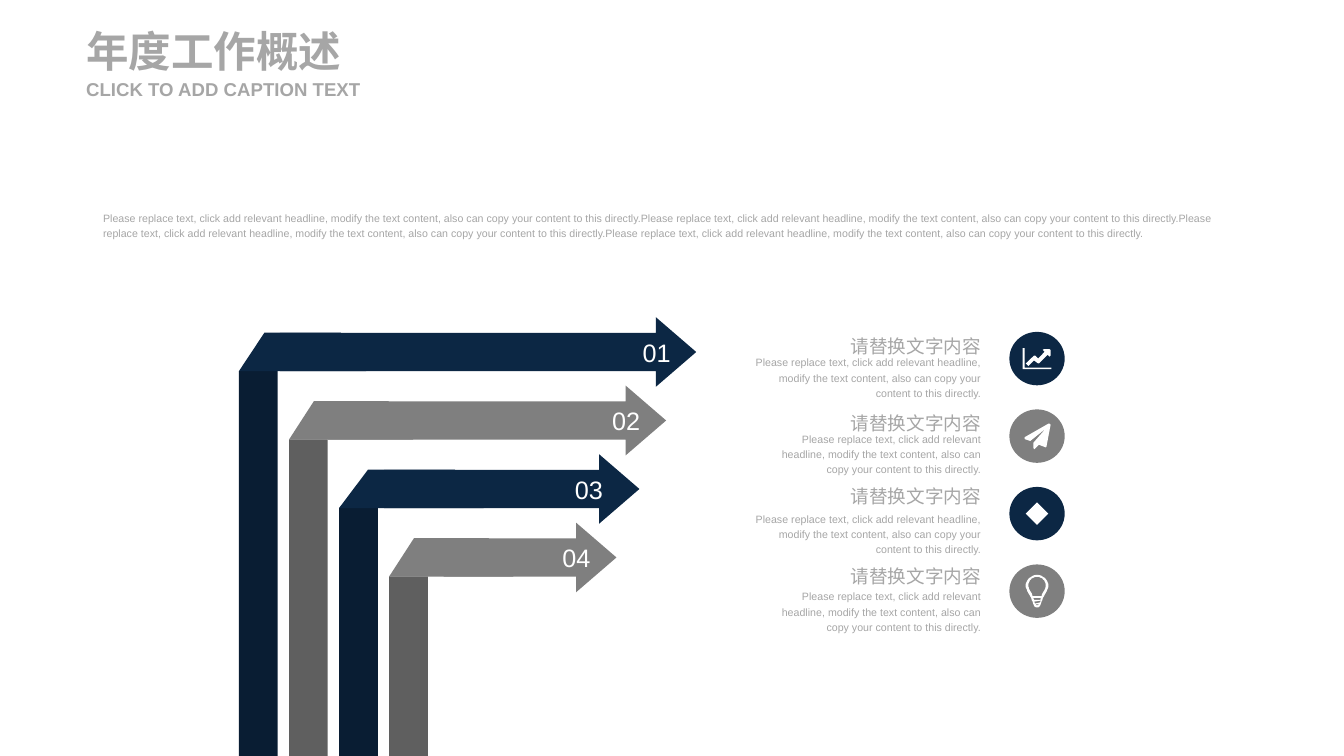
from pptx import Presentation
from pptx import util as u
from pptx.dml.color import RGBColor
from pptx.enum import shapes, text

NAVY, NAVY_DARK = "0C2744", "091D33"
GREY, GREY_DARK = "7F7F7F", "5F5F5F"
TEXT, WHITE = "A6A6A6", "FFFFFF"
WIDTH, HEIGHT = 35.71, 20.09
PHRASE = ("Please replace text, click add relevant headline, modify the text "
          "content, also can copy your content to this directly.")
HEADING = "请替换文字内容"


def rgb(value):
    return RGBColor.from_string(value)


def bezier(start, *segments, steps=10):
    """Points along a chain of cubic curves, start included."""
    points = [start]
    for a, b, c in segments:
        p0 = points[-1]
        for k in range(1, steps + 1):
            t = k / steps
            s = 1 - t
            points.append(tuple(
                s**3 * p + 3 * s * s * t * q + 3 * s * t * t * v + t**3 * w
                for p, q, v, w in zip(p0, a, b, c)))
    return points


def mirrored(half):
    """Closes a left half outline with its reflection in the vertical axis."""
    return half + [(-x, y) for x, y in reversed(half)]


# Icon outlines: tenths of a millimetre from the centre of the disc
CHART = [
    [(38, 28), (-38, 28), (-38, -28), (-33, -28), (-33, 24), (38, 24)],
    [(36, -8), (33, -5), (28, -10), (5, 13), (3, 13), (-8, 5), (-23, 20),
     (-30, 13), (-8, -8), (-5, -8), (3, 0), (20, -18), (15, -23),
     (18, -25), (33, -25), (36, -23)],
]
PLANE = [
    [(36, -30), (25, 28), (23, 30), (5, 23), (-5, 33), (-8, 35), (-10, 30),
     (-10, 18), (23, -20), (-18, 13), (-33, 8), (-33, 3), (30, -33),
     (33, -33)],
]
BULB = [
    mirrored(bezier((0, -43),
                    ((-15, -43), (-30, -30), (-30, -15)),
                    ((-30, -3), (-18, 10), (-15, 20)),
                    ((-10, 33), (-10, 43), (0, 43)))),
    mirrored(bezier((0, -38),
                    ((-13, -38), (-23, -28), (-23, -15)),
                    ((-23, -10), (-20, -3), (-15, 5)),
                    ((-13, 8), (-13, 10), (-12, 13)))),
    [(-10, 18), (10, 18), (9, 23), (-8, 23)],
    [(-8, 28), (10, 25), (8, 30), (-5, 33)],
    [(-5, 36), (8, 33), (0, 38)],
]


class Deck:
    font = "Arial"

    def __init__(self):
        self.prs = Presentation()
        self.prs.slide_width, self.prs.slide_height = u.Cm(WIDTH), u.Cm(HEIGHT)
        self.slide = self.prs.slides.add_slide(self.prs.slide_layouts[6])

    def paint(self, sp, color):
        sp.shadow.inherit = False
        sp.fill.solid()
        sp.fill.fore_color.rgb = rgb(color)
        sp.line.fill.background()

    def shape(self, kind, x, y, w, h, color):
        sp = self.slide.shapes.add_shape(kind, u.Cm(x), u.Cm(y), u.Cm(w), u.Cm(h))
        self.paint(sp, color)
        return sp

    def icon(self, outlines, cx, cy):
        """Draws the outlines, or a plain diamond when there are none."""
        if not outlines:
            size = 0.6
            self.shape(shapes.MSO_SHAPE.DIAMOND, cx - size / 2, cy - size / 2,
                       size, size, WHITE)
            return
        first, *others = outlines
        builder = self.slide.shapes.build_freeform(*first[0], scale=u.Cm(0.01))
        builder.add_line_segments(first[1:], close=True)
        for outline in others:
            builder.move_to(*outline[0])
            builder.add_line_segments(outline[1:], close=True)
        self.paint(builder.convert_to_shape(u.Cm(cx), u.Cm(cy)), WHITE)

    def text(self, words, x, y, w, h, size, color=TEXT, bold=False,
             align="LEFT", middle=False, spacing=1.0):
        tf = self.slide.shapes.add_textbox(
            u.Cm(x), u.Cm(y), u.Cm(w), u.Cm(h)).text_frame
        tf.margin_left = tf.margin_right = tf.margin_top = tf.margin_bottom = 0
        tf.word_wrap = True
        tf.vertical_anchor = (text.MSO_ANCHOR.MIDDLE if middle
                              else text.MSO_ANCHOR.TOP)
        p = tf.paragraphs[0]
        p.alignment = text.PP_ALIGN[align]
        p.line_spacing = spacing
        r = p.add_run()
        r.text = words
        r.font.name, r.font.size, r.font.bold = self.font, u.Pt(size), bold
        r.font.color.rgb = rgb(color)

    def bent_arrow(self, i, left, right, fold_width, number_x, color, dark):
        kinds = shapes.MSO_SHAPE
        x, y = 6.35 + 1.33 * i, 9.86 + 1.82 * i
        self.shape(kinds.RECTANGLE, x, y, 1.03, HEIGHT - y, dark)
        arrow = self.shape(kinds.RIGHT_ARROW, left, y - 1.43,
                           right - left, 1.85, color)
        arrow.adjustments[0], arrow.adjustments[1] = 0.55, 0.58
        fold = self.shape(kinds.FLOWCHART_MANUAL_OPERATION, x, y - 1.02,
                          fold_width, 1.02, color)
        fold.rotation = 180
        self.text(f"{i + 1:02}", number_x, y - 0.91, 1.27, 0.81, 19, WHITE,
                  align="CENTER", middle=True)

    def item(self, i, heading_y, spacing, body_y, body_width, outlines, color):
        right = 26.07
        self.text(HEADING, right - 6, heading_y, 6, 0.7, 14,
                  align="RIGHT", spacing=spacing)
        self.text(PHRASE, right - body_width, body_y, body_width, 1.2, 8,
                  align="RIGHT", spacing=1.2)
        x, y, w, h = 26.82, 8.82 + 2.06 * i, 1.47, 1.42
        self.shape(shapes.MSO_SHAPE.OVAL, x, y, w, h, color)
        self.icon(outlines, x + w / 2, y + h / 2)


def main():
    deck = Deck()
    deck.text("年度工作概述", 2.29, 0.66, 7.8, 1.37, 32, bold=True, middle=True)
    deck.text("CLICK TO ADD CAPTION TEXT", 2.29, 2.06, 7.8, 0.61, 14,
              bold=True, middle=True)
    deck.text(PHRASE * 4, 2.74, 5.57, 30.2, 0.79, 8, spacing=1.2)

    tones = [(NAVY, NAVY_DARK), (GREY, GREY_DARK)] * 2
    arrows = [  # left, right, fold width, number left
        (7.44, 18.5, 3.38, 16.81),
        (8.71, 17.7, 3.3, 16),
        (10.21, 16.99, 3.84, 15.01),
        (11.79, 16.38, 3.3, 14.68),
    ]
    items = [  # heading top, heading spacing, body top, body width, icon
        (8.79, 1.2, 9.4, 6, CHART),
        (10.82, 1.2, 11.43, 5.94, PLANE),
        (12.88, 1, 13.56, 6, None),
        (15.01, 1, 15.62, 5.94, BULB),
    ]
    for i, (arrow, item, (color, dark)) in enumerate(zip(arrows, items, tones)):
        deck.bent_arrow(i, *arrow, color, dark)
        deck.item(i, *item, color)
    deck.prs.save("out.pptx")


if __name__ == "__main__":
    main()
